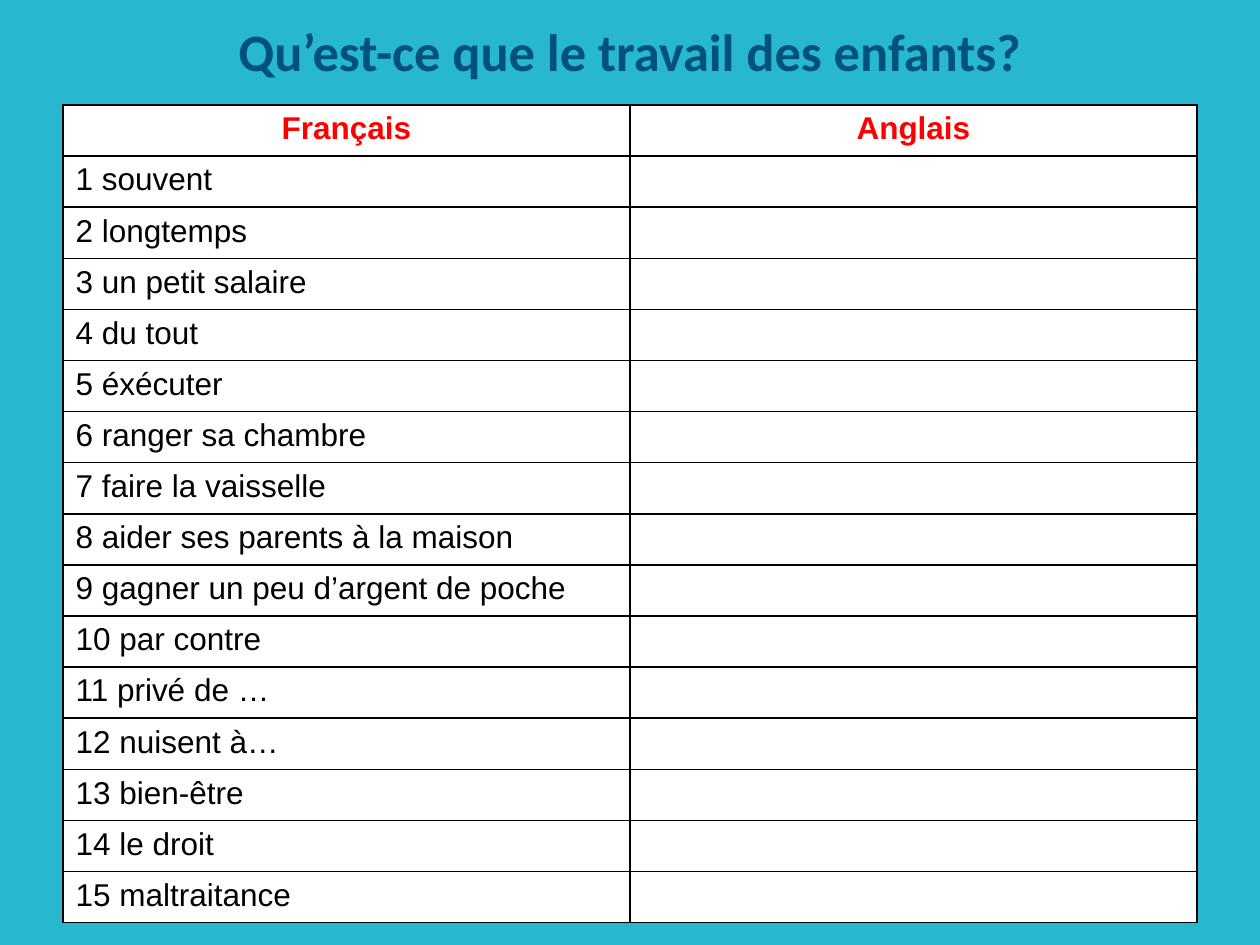
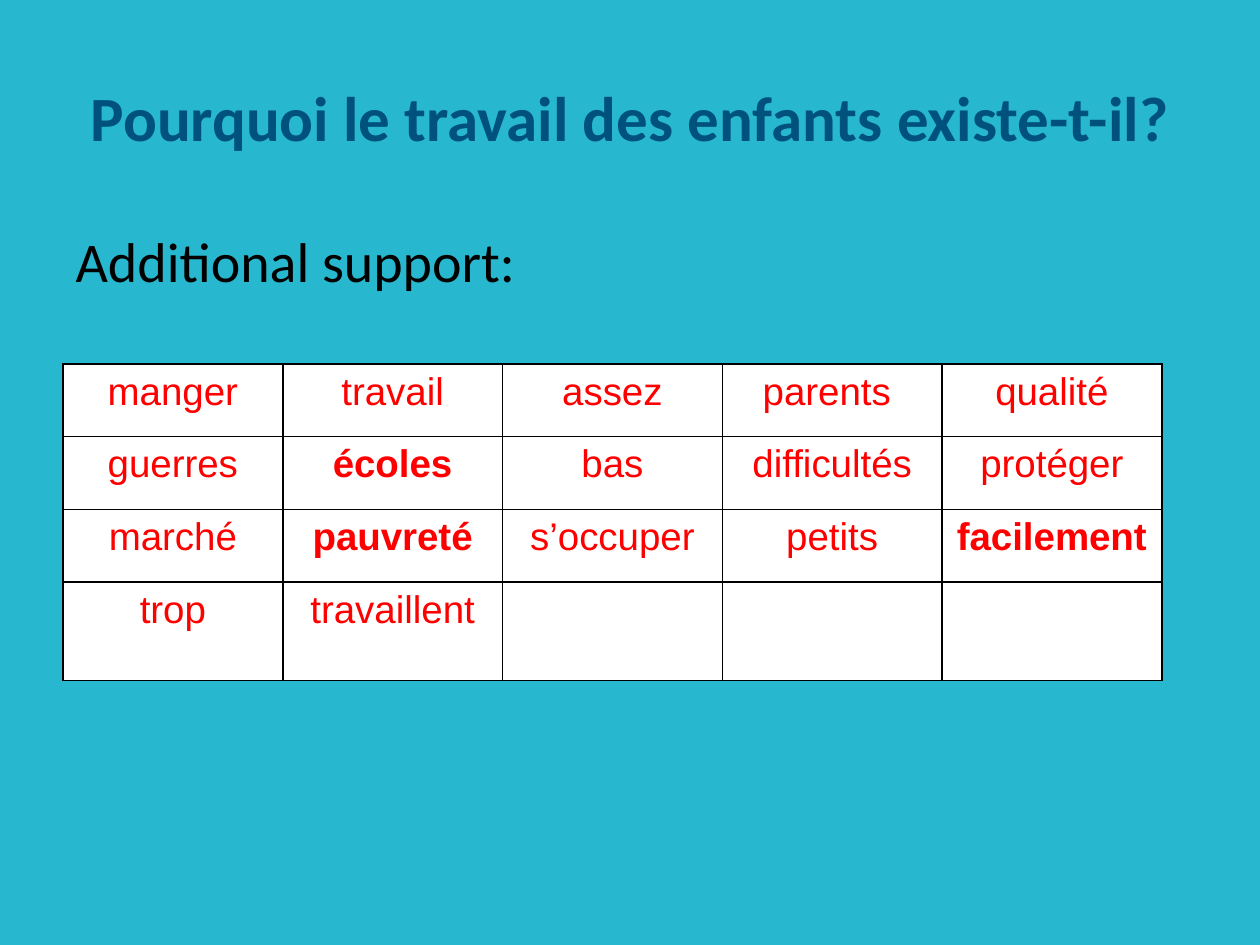
from lxml.etree import SubElement
from pptx import Presentation
from pptx.dml.color import RGBColor
from pptx.enum.text import MSO_ANCHOR as Anchor, MSO_AUTO_SIZE as AutoSize, PP_ALIGN as Align
from pptx.oxml.ns import qn
from pptx.util import Pt

COLOURS = {
    "background": "27B8CF",
    "title": "00527D",
    "text": "000000",
    "accent": "FF0000",
    "cell": "FFFFFF",
    "border": "000000",
}
TITLE_ONLY, TITLE_AND_BODY = 5, 1
LEFT, WIDTH = 36, 648

VOCABULARY = [
    "souvent", "longtemps", "un petit salaire", "du tout", "éxécuter",
    "ranger sa chambre", "faire la vaisselle", "aider ses parents à la maison",
    "gagner un peu d’argent de poche", "par contre", "privé de …", "nuisent à…",
    "bien-être", "le droit", "maltraitance",
]
WORD_BANK = [
    ["manger", "travail", "assez", "parents ", "qualité"],
    ["guerres", "écoles", "bas", "difficultés", "protéger"],
    ["marché", "pauvreté", "s’occuper", "petits", "facilement"],
    ["trop", "travaillent", "", "", ""],
]
BOLD_WORDS = {"écoles", "pauvreté", "facilement"}


def colour(name):
    return RGBColor.from_string(COLOURS[name])


class Deck:
    def __init__(self):
        self.presentation = Presentation()
        self.presentation.slide_width = Pt(720)
        self.presentation.slide_height = Pt(540)
        backdrop = self.presentation.slide_master.background.fill
        backdrop.solid()
        backdrop.fore_color.rgb = colour("background")
        self.slide = None

    def new_slide(self, layout):
        self.slide = self.presentation.slides.add_slide(
            self.presentation.slide_layouts[layout])

    def set_text(self, frame, text, font, size, ink, bold=False, align=Align.LEFT):
        frame.text = text
        paragraph = frame.paragraphs[0]
        paragraph.alignment = align
        for run in paragraph.runs:
            run.font.name = font
            run.font.size = Pt(size)
            run.font.bold = bold
            run.font.color.rgb = colour(ink)
        return paragraph

    def place(self, holder, top, height, anchor):
        """Move a placeholder to the shared left edge and width."""
        holder.left, holder.top = Pt(LEFT), Pt(top)
        holder.width, holder.height = Pt(WIDTH), Pt(height)
        holder.text_frame.word_wrap = True
        holder.text_frame.auto_size = AutoSize.NONE
        holder.text_frame.vertical_anchor = anchor
        return holder.text_frame

    def title(self, text, top, height, size, anchor=Anchor.MIDDLE):
        frame = self.place(self.slide.shapes.title, top, height, anchor)
        self.set_text(frame, text, "Calibri", size, "title", True, Align.CENTER)

    def body(self, text, top, height):
        frame = self.place(self.slide.placeholders[1], top, height, Anchor.TOP)
        paragraph = self.set_text(frame, text, "Calibri", 32, "text")
        properties = paragraph._p.get_or_add_pPr()
        properties.set("marL", str(Pt(27)))
        properties.set("indent", str(-Pt(27)))
        SubElement(properties, qn("a:buNone"))

    def table(self, rows, top, width, row_heights, style):
        """Draw a bordered grid; style(row, text) gives each cell's text format."""
        columns = len(rows[0])
        grid = self.slide.shapes.add_table(
            len(rows), columns, Pt(LEFT), Pt(top), Pt(width), Pt(sum(row_heights))).table
        for column in grid.columns:
            column.width = Pt(width / columns)
        for r, (words, height) in enumerate(zip(rows, row_heights)):
            grid.rows[r].height = Pt(height)
            for c, word in enumerate(words):
                cell = grid.cell(r, c)
                self.border(cell)
                cell.fill.solid()
                cell.fill.fore_color.rgb = colour("cell")
                self.set_text(cell.text_frame, word, "Arial", **style(r, word))

    def border(self, cell):
        properties = cell._tc.get_or_add_tcPr()
        for side in ("lnL", "lnR", "lnT", "lnB"):
            line = SubElement(properties, qn(f"a:{side}"), w=str(Pt(1)))
            fill = SubElement(line, qn("a:solidFill"))
            SubElement(fill, qn("a:srgbClr"), val=COLOURS["border"])


def vocabulary_style(row, word):
    if row == 0:
        return dict(size=18, ink="accent", bold=True, align=Align.CENTER)
    return dict(size=18, ink="text")


def word_bank_style(row, word):
    return dict(size=22, ink="accent", bold=word in BOLD_WORDS, align=Align.CENTER)


def main():
    deck = Deck()

    deck.new_slide(TITLE_ONLY)
    deck.title("Qu’est-ce que le travail des enfants?", 7.2, 36, 30, Anchor.TOP)
    entries = [[f"{number} {word}", ""] for number, word in enumerate(VOCABULARY, 1)]
    rows = [["Français", "Anglais"]] + entries
    deck.table(rows, 60, WIDTH, [29.2] * len(rows), vocabulary_style)

    deck.new_slide(TITLE_AND_BODY)
    deck.title("Pourquoi le travail des enfants existe-t-il?", 21.6, 90, 36)
    deck.body("Additional support:", 126, 356.4)
    deck.table(WORD_BANK, 208, 628, [41.5, 41.5, 41.5, 56.5], word_bank_style)

    deck.presentation.save("out.pptx")


if __name__ == "__main__":
    main()
